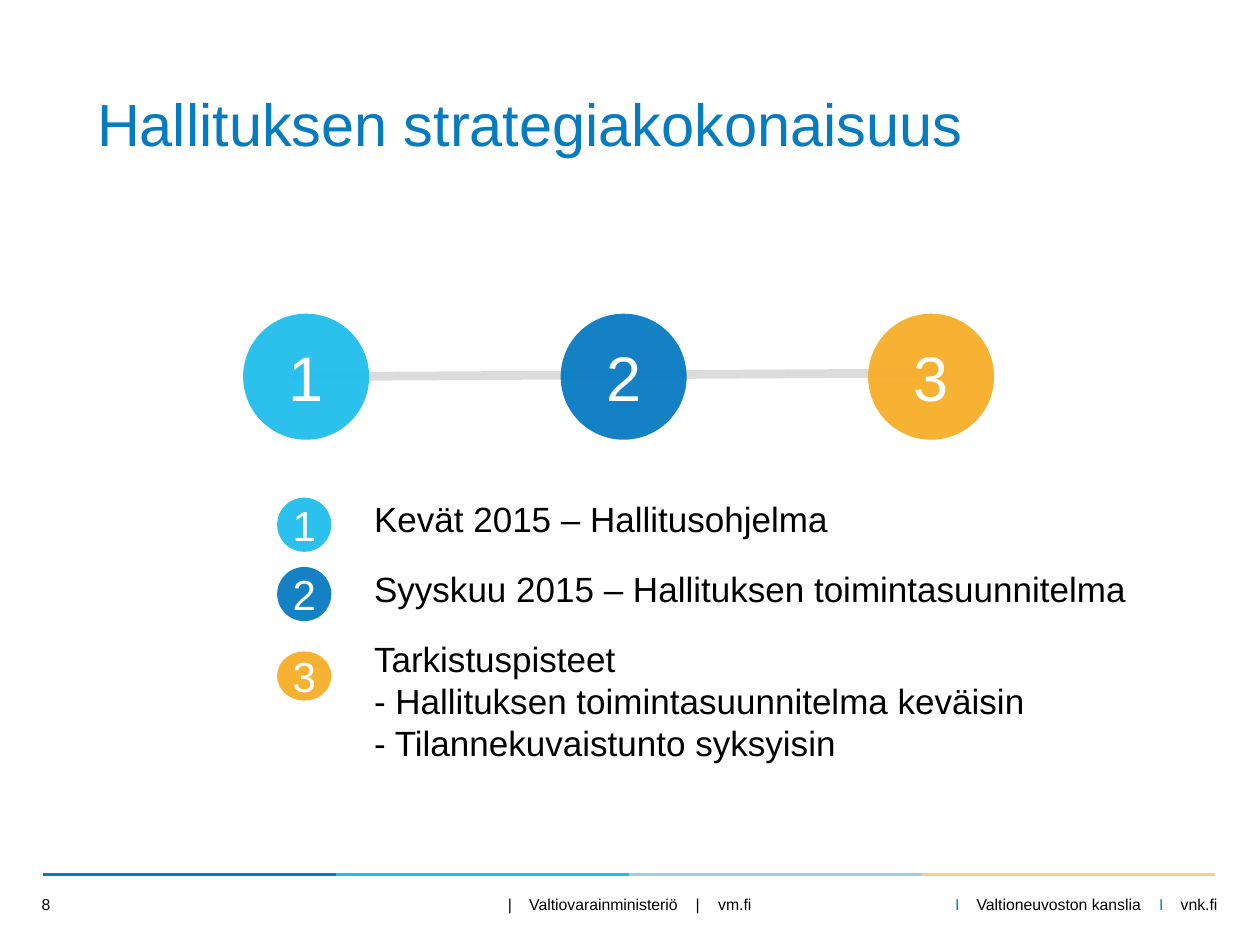
from lxml.etree import SubElement
from pptx import Presentation
from pptx.dml.color import RGBColor
from pptx.enum.shapes import MSO_CONNECTOR, MSO_SHAPE
from pptx.enum.text import MSO_ANCHOR, MSO_AUTO_SIZE, PP_ALIGN
from pptx.oxml.ns import qn
from pptx.util import Inches, Pt

BLUE = RGBColor(0x07, 0x7B, 0xC0)
CYAN = RGBColor(0x21, 0xBD, 0xED)
ORANGE = RGBColor(0xF7, 0xAD, 0x29)
PALE_BLUE = RGBColor(0x9A, 0xD0, 0xE1)
PALE_ORANGE = RGBColor(0xFA, 0xCD, 0x7F)
GREY = RGBColor(0xDC, 0xDC, 0xDC)
BLACK = RGBColor(0, 0, 0)
WHITE = RGBColor(0xFF, 0xFF, 0xFF)

COLUMNS, ROWS = 100, 75


class SlideBuilder:
    """Places styled elements on a grid of 100 columns and 75 rows."""

    font = "Arial"

    def __init__(self, presentation):
        self.column = presentation.slide_width / COLUMNS
        self.row = presentation.slide_height / ROWS
        self.slide = presentation.slides.add_slide(presentation.slide_layouts[5])

    def box(self, left, top, width, height):
        return (round(left * self.column), round(top * self.row),
                round(width * self.column), round(height * self.row))

    def format_run(self, run, size, color):
        run.font.name = self.font
        run.font.size = Pt(size)
        run.font.color.rgb = color

    def format_frame(self, frame, size, color, align=PP_ALIGN.LEFT,
                     anchor=MSO_ANCHOR.MIDDLE):
        frame.word_wrap = True
        frame.vertical_anchor = anchor
        for paragraph in frame.paragraphs:
            paragraph.alignment = align
            for run in paragraph.runs:
                self.format_run(run, size, color)

    def remove_margins(self, frame):
        frame.margin_left = frame.margin_right = 0
        frame.margin_top = frame.margin_bottom = 0

    def title(self, text, *place):
        shape = self.slide.shapes.title
        shape.left, shape.top, shape.width, shape.height = self.box(*place)
        shape.text_frame.text = text
        self.format_frame(shape.text_frame, 34, BLUE, anchor=MSO_ANCHOR.BOTTOM)

    def line(self, start, end, color, width):
        start_x, start_y, end_x, end_y = self.box(*start, *end)
        connector = self.slide.shapes.add_connector(
            MSO_CONNECTOR.STRAIGHT, start_x, start_y, end_x, end_y)
        connector.line.color.rgb = color
        connector.line.width = Pt(width)
        SubElement(connector._element.spPr, qn("a:effectLst"))

    def circle(self, text, color, size, *place):
        shape = self.slide.shapes.add_shape(MSO_SHAPE.OVAL, *self.box(*place))
        shape.shadow.inherit = False
        shape.line.fill.background()
        shape.fill.solid()
        shape.fill.fore_color.rgb = color
        fill_color = shape.fill._xPr.find(qn("a:solidFill"))[0]
        SubElement(fill_color, qn("a:alpha"), val="95000")
        shape.text_frame.text = text
        self.remove_margins(shape.text_frame)
        self.format_frame(shape.text_frame, size, WHITE, PP_ALIGN.CENTER)

    def explanations(self, texts, *place):
        frame = self.slide.shapes.add_textbox(*self.box(*place)).text_frame
        frame.text = "\n".join(texts)
        self.format_frame(frame, 20, BLACK, anchor=MSO_ANCHOR.TOP)
        frame.auto_size = MSO_AUTO_SIZE.SHAPE_TO_FIT_TEXT
        for paragraph in frame.paragraphs:
            paragraph.space_before = Pt(16)

    def footer(self, parts, place, bar_color=BLACK, indent=0, tabs=()):
        frame = self.slide.shapes.add_textbox(*self.box(*place)).text_frame
        self.remove_margins(frame)
        frame.margin_left = round(indent * self.column)
        paragraph = frame.paragraphs[0]
        for index, part in enumerate(parts):
            run = paragraph.add_run()
            run.text = part if index == 0 else "\t" + part
        self.format_frame(frame, 9, BLACK)
        for run, part in zip(paragraph.runs, parts):
            if part in ("I", "|"):
                run.font.color.rgb = bar_color
        if tabs:
            tab_list = SubElement(paragraph._p.get_or_add_pPr(), qn("a:tabLst"))
            for tab in tabs:
                SubElement(tab_list, qn("a:tab"),
                           pos=str(round(tab * self.column)), algn="l")


def main():
    presentation = Presentation()
    presentation.slide_width, presentation.slide_height = Inches(10), Inches(7.5)
    builder = SlideBuilder(presentation)

    # Title
    builder.title("Hallituksen strategiakokonaisuus", 6.7, 1.4, 88.3, 11.7)

    # Four-coloured rule above the footer
    for index, color in enumerate((BLUE, CYAN, PALE_BLUE, PALE_ORANGE)):
        left = 3.4 + index * 23.25
        builder.line((left, 69.4), (left + 23.25, 69.4), color, 2)

    # Timeline and its key
    builder.line((23.2, 29.9), (75.1, 29.6), GREY, 5)
    steps = (
        ("1", CYAN, 19.3, 39.5, 4.3),
        ("2", BLUE, 44.5, 45, 4.3),
        ("3", ORANGE, 68.9, 51.7, 3.9),
    )
    for number, color, left, key_top, key_height in steps:
        builder.circle(number, color, 36, left, 24.9, 10, 10)
        builder.circle(number, color, 24, 22, key_top, 4.3, key_height)

    # Explanations, with line breaks inside the last one
    builder.explanations((
        "Kevät 2015 – Hallitusohjelma",
        "Syyskuu 2015 – Hallituksen toimintasuunnitelma",
        "Tarkistuspisteet\v- Hallituksen toimintasuunnitelma keväisin"
        "\v- Tilannekuvaistunto syksyisin",
    ), 28.7, 39, 63.8, 22.3)

    # Footer
    builder.footer(("8",), (3.3, 70.3, 4.2, 2.9))
    builder.footer(("|", "Valtiovarainministeriö", "|", "vm.fi"),
                   (35, 70.3, 29.9, 2.9), indent=5.3, tabs=(1.7, 14.9, 16.7))
    builder.footer(("I", "Valtioneuvoston kanslia", "I", "vnk.fi"),
                   (74.4, 70.3, 22.5, 3), BLUE, indent=1.4,
                   tabs=(1.7, 16.2, 17.9))

    presentation.save("out.pptx")


if __name__ == "__main__":
    main()
